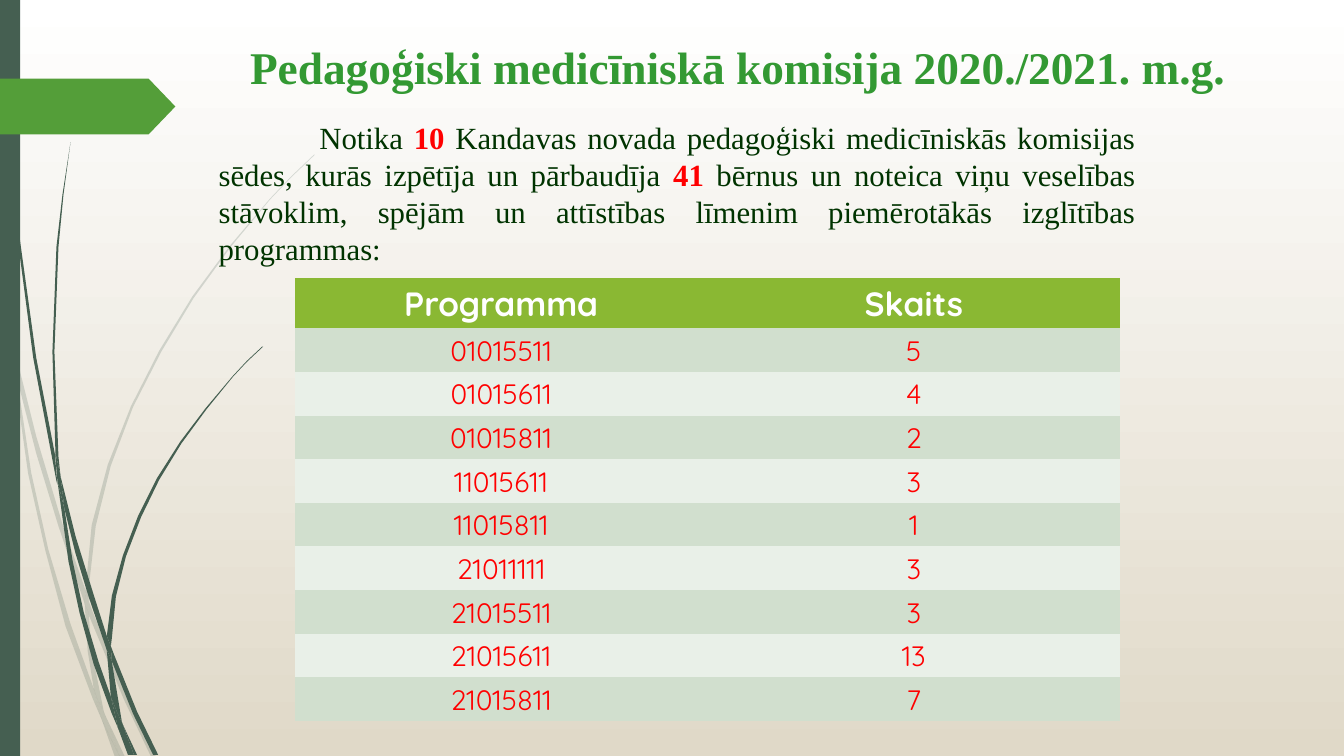
from dataclasses import dataclass

from lxml import etree
from pptx import Presentation
from pptx.dml.color import RGBColor
from pptx.enum.shapes import MSO_SHAPE
from pptx.enum.text import MSO_ANCHOR, MSO_AUTO_SIZE, PP_ALIGN
from pptx.oxml.ns import qn
from pptx.util import Cm, Pt

CENTER, JUSTIFY = PP_ALIGN.CENTER, PP_ALIGN.JUSTIFY
TOP, MIDDLE = MSO_ANCHOR.TOP, MSO_ANCHOR.MIDDLE
NO_FIT = MSO_AUTO_SIZE.NONE
RECT, ARROW = MSO_SHAPE.RECTANGLE, MSO_SHAPE.PENTAGON

WHITE = RGBColor(0xFF, 0xFF, 0xFF)
SAND = RGBColor(0xE0, 0xD9, 0xC8)
PINE = RGBColor(0x45, 0x5F, 0x51)
GREEN = RGBColor(0x54, 0x9E, 0x39)
LEAF = RGBColor(0x33, 0x99, 0x33)
DARK = RGBColor(0x00, 0x33, 0x00)
RED = RGBColor(0xFF, 0x00, 0x00)
LIME = RGBColor(0x8A, 0xB8, 0x33)
BANDS = (RGBColor(0xD1, 0xDF, 0xCE), RGBColor(0xE9, 0xF0, 0xE8))

SERIF, SANS = "Times New Roman", "Quicksand"
PLAIN_GRID = "{2D5ABB26-0587-4C30-8999-92F81FD0307C}"
HIGH = 19.05
GRAIN = Cm(2.54) / 100


@dataclass
class Blade:
    rim: list[tuple[int, int]]
    alpha: int = 100


@dataclass
class Piece:
    text: str
    size: float
    color: RGBColor
    font: str = SERIF
    bold: bool = False


PALE = [
    [(11, 350), (9, 322), (0, 282), (0, 299), (10, 344)],
    [(58, 522), (84, 599), (85, 586), (62, 520), (36, 433), (14, 345), (17, 376),
     (36, 450)],
    [(92, 607), (88, 596), (88, 610), (123, 694), (150, 751), (155, 751), (127, 692)],
    [(119, 751), (124, 751), (105, 711)],
    [(93, 683), (70, 619), (48, 545), (31, 469), (17, 376), (11, 350), (28, 470),
     (45, 546), (65, 621), (92, 693), (101, 714), (99, 707)],
    [(84, 599), (87, 646), (93, 683), (96, 692), (105, 711), (103, 706), (91, 646),
     (88, 610), (88, 608)],
    [(88, 584), (95, 522), (110, 462), (132, 404), (160, 349), (192, 296), (229, 245),
     (268, 198), (290, 175), (312, 154), (312, 153), (289, 175), (268, 197), (228, 244),
     (191, 294), (158, 348), (130, 403), (107, 461), (91, 521), (85, 584), (85, 586),
     (88, 596)],
    [(101, 714), (114, 751), (119, 751)],
    [(88, 608), (88, 610), (88, 596), (85, 586), (84, 599)],
    [(96, 692), (93, 683), (99, 707), (101, 714), (119, 751), (105, 711)],
]
DEEP = [
    [(7, 110), (17, 233), (33, 355), (56, 477), (57, 481), (55, 457), (55, 453),
     (36, 355), (19, 232), (8, 109), (5, 48), (4, 0), (3, 0), (4, 48)],
    [(88, 592), (106, 645), (106, 633), (106, 631), (93, 590), (75, 532), (60, 472),
     (64, 505), (75, 549)],
    [(113, 649), (110, 641), (111, 656), (132, 708), (152, 749), (157, 749), (136, 706)],
    [(110, 691), (98, 657), (83, 607), (72, 556), (64, 505), (57, 477), (68, 557),
     (79, 608), (93, 659), (111, 708), (117, 722), (116, 717)],
    [(60, 472), (58, 453), (54, 349), (58, 245), (63, 193), (70, 141), (62, 193),
     (56, 245), (52, 349), (55, 449)],
    [(133, 749), (136, 749), (122, 719)],
    [(57, 477), (64, 505), (60, 472), (55, 449), (55, 453)],
    [(111, 633), (115, 592), (125, 552), (140, 513), (158, 476), (180, 440), (205, 406),
     (231, 374), (245, 359), (261, 344), (260, 344), (245, 358), (231, 373), (204, 405),
     (179, 438), (156, 474), (137, 512), (122, 551), (111, 591), (106, 631), (110, 641)],
    [(117, 722), (127, 749), (131, 749)],
    [(106, 645), (110, 691), (116, 706), (122, 719), (121, 716), (111, 656), (109, 651)],
    [(106, 645), (109, 651), (111, 656), (110, 641), (106, 631), (106, 633)],
    [(116, 706), (110, 691), (116, 717), (117, 722), (130, 749), (133, 749), (122, 719)],
]
BLADES = [Blade(rim, 20) for rim in PALE] + [Blade(rim) for rim in DEEP]

INTRO = [
    Piece("Notika ", 22, DARK),
    Piece("10", 22, RED, bold=True),
    Piece(" Kandavas novada pedagoģiski medicīniskās komisijas sēdes, "
          "kurās izpētīja un pārbaudīja ", 22, DARK),
    Piece("41 ", 22, RED, bold=True),
    Piece("bērnus un noteica viņu veselības stāvoklim, spējām un attīstības "
          "līmenim piemērotākās izglītības programmas:", 22, DARK),
]

ROWS = [
    ("Programma", "Skaits"),
    ("01015511", "5"), ("01015611", "4"), ("01015811", "2"),
    ("11015611", "3"), ("11015811", "1"), ("21011111", "3"),
    ("21015511", "3"), ("21015611", "13"), ("21015811", "7"),
]


def paint(shape, color: RGBColor) -> None:
    shape.fill.solid()
    shape.fill.fore_color.rgb = color
    shape.line.fill.background()
    shape.shadow.inherit = False


def write(par, pieces: list[Piece], align) -> None:
    par.alignment = align
    for piece in pieces:
        run = par.add_run()
        run.text = piece.text
        font = run.font
        font.name, font.size, font.bold = piece.font, Pt(piece.size), piece.bold
        font.color.rgb = piece.color


def draw_blade(shapes, blade: Blade) -> None:
    pen = shapes.build_freeform(*blade.rim[0], scale=GRAIN)
    pen.add_line_segments(blade.rim[1:], close=True)
    shape = pen.convert_to_shape()
    paint(shape, PINE)
    if blade.alpha < 100:
        tint = shape.element.spPr.find(qn("a:solidFill"))[0]
        etree.SubElement(tint, qn("a:alpha"), val=str(blade.alpha * 1000))


def draw_side(shapes) -> None:
    for blade in BLADES:
        draw_blade(shapes, blade)
    paint(shapes.add_shape(RECT, 0, 0, Cm(0.51), Cm(HIGH)), PINE)
    arrow = shapes.add_shape(ARROW, 0, Cm(1.98), Cm(4.42), Cm(1.41))
    arrow.adjustments[0] = 0.48
    paint(arrow, GREEN)


def draw_title(title) -> None:
    title.left, title.top = Cm(5.46), Cm(0.86)
    title.width, title.height = Cm(26.26), Cm(3.56)
    frame = title.text_frame
    frame.auto_size, frame.vertical_anchor = NO_FIT, TOP
    text = "Pedagoģiski medicīniskā komisija 2020./2021. m.g."
    write(frame.paragraphs[0], [Piece(text, 32.4, LEAF, bold=True)], CENTER)


def draw_intro(shapes) -> None:
    box = shapes.add_textbox(Cm(5.26), Cm(2.87), Cm(23.6), Cm(3.07))
    frame = box.text_frame
    frame.word_wrap = True
    par = frame.paragraphs[0]
    write(par, INTRO, JUSTIFY)
    par._p.get_or_add_pPr().set("indent", str(Cm(2.54)))


def draw_table(shapes) -> None:
    frame = shapes.add_table(len(ROWS), 2, Cm(7.43), Cm(7.01), Cm(20.8), Cm(11.16))
    frame.element.xpath(".//a:tableStyleId")[0].text = PLAIN_GRID
    table = frame.table
    for i, words in enumerate(ROWS):
        head = i == 0
        table.rows[i].height = Cm(1.26 if head else 1.1)
        for j, word in enumerate(words):
            cell = table.cell(i, j)
            cell.fill.solid()
            cell.fill.fore_color.rgb = LIME if head else BANDS[(i - 1) % 2]
            cell.vertical_anchor = MIDDLE
            cell.margin_top, cell.margin_bottom = Cm(0.12), Cm(0.08)
            piece = Piece(word, 24 if head else 20, WHITE if head else RED, SANS, head)
            write(cell.text_frame.paragraphs[0], [piece], CENTER)


def main() -> None:
    deck = Presentation()
    deck.slide_width, deck.slide_height = Cm(33.87), Cm(HIGH)
    slide = deck.slides.add_slide(deck.slide_layouts[5])
    fill = slide.background.fill
    fill.gradient()
    fill.gradient_angle = 270
    for stop, color, place in zip(fill.gradient_stops, (WHITE, SAND), (0, 1)):
        stop.color.rgb, stop.position = color, place
    draw_side(slide.shapes)
    draw_title(slide.shapes.title)
    draw_intro(slide.shapes)
    draw_table(slide.shapes)
    deck.save("out.pptx")


if __name__ == "__main__":
    main()
